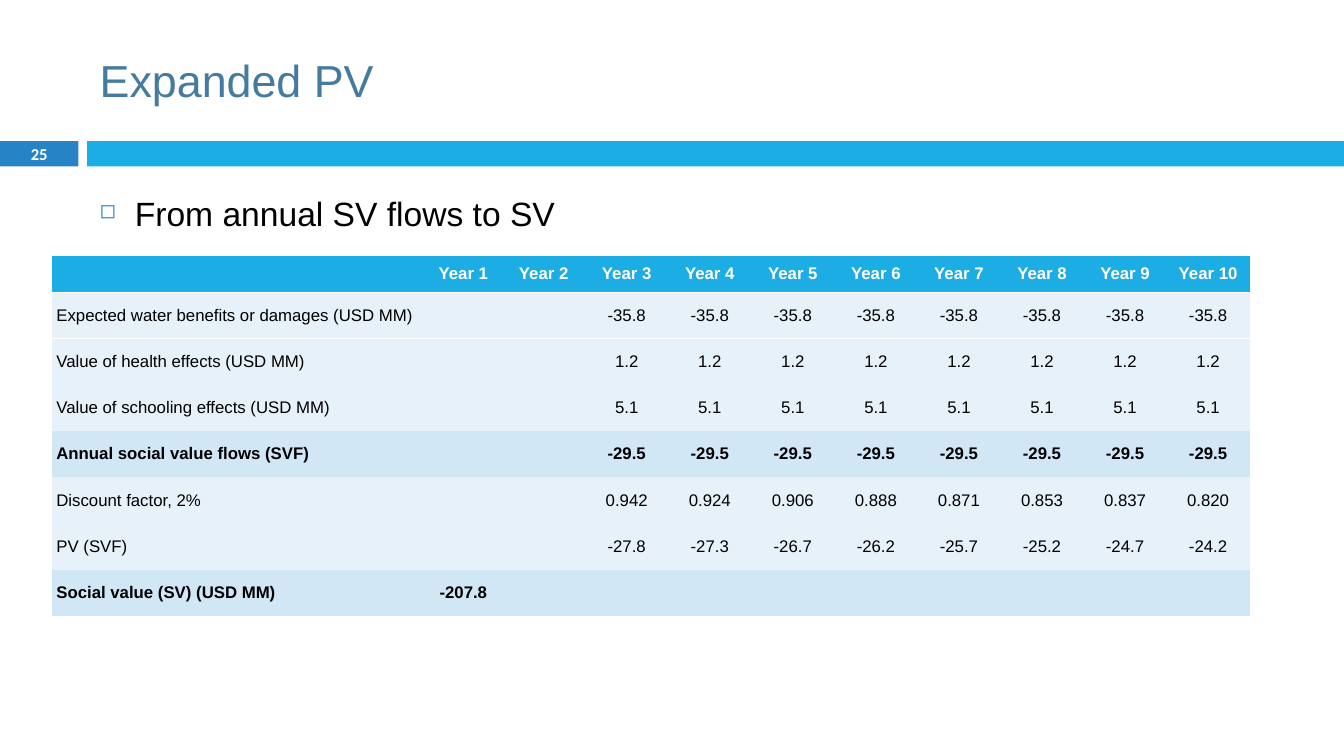
from lxml.etree import SubElement
from pptx import Presentation
from pptx.dml.color import RGBColor as RGB
from pptx.enum.shapes import MSO_SHAPE as SHAPE
from pptx.enum.text import MSO_ANCHOR as ANCHOR, PP_ALIGN as ALIGN
from pptx.oxml import parse_xml
from pptx.oxml.ns import nsdecls, qn
from pptx.util import Pt

COLORS = {
    "title": "457B9E", "number": "2683C6", "accent": "1CADE4",
    "light": "E7F1FA", "total": "D1E7F6", "white": "FFFFFF", "text": "000000",
}
NO_GRID = "{2D5ABB26-0587-4C30-8999-92F81FD0307C}"
YEARS = 10
ROWS = [
    ("", [f"Year {n + 1}" for n in range(YEARS)], "accent"),
    ("Expected water benefits or damages (USD MM)", ["", ""] + ["-35.8"] * 8, "light"),
    ("Value of health effects (USD MM)", ["", ""] + ["1.2"] * 8, "light"),
    ("Value of schooling effects (USD MM)", ["", ""] + ["5.1"] * 8, "light"),
    ("Annual social value flows (SVF)", ["", ""] + ["-29.5"] * 8, "total"),
    ("Discount factor, 2%", ["", "", "0.942", "0.924", "0.906", "0.888",
                             "0.871", "0.853", "0.837", "0.820"], "light"),
    ("PV (SVF)", ["", "", "-27.8", "-27.3", "-26.7", "-26.2",
                  "-25.7", "-25.2", "-24.7", "-24.2"], "light"),
    ("Social value (SV) (USD MM)", ["-207.8"] + [""] * 9, "total"),
]


def set_attrs(obj, values):
    for name, value in values.items():
        setattr(obj, name, value)


def write(tf, text, size, color, bold=False, font="Arial", **para):
    p = tf.paragraphs[0]
    set_attrs(p, para)
    if text:
        r = p.add_run()
        r.text = text
        set_attrs(r.font, {"size": Pt(size), "name": font, "bold": bold})
        r.font.color.rgb = RGB.from_string(COLORS[color])
    return p


def add_title(s, x, y, w, h):
    sp = s.shapes.title
    set_attrs(sp, {"left": Pt(x), "top": Pt(y), "width": Pt(w), "height": Pt(h)})
    sp.text_frame.vertical_anchor = ANCHOR.MIDDLE
    write(sp.text_frame, "Expanded PV", 32, "title", alignment=ALIGN.LEFT)


def add_band(s, x, y, w, h):
    number_w, gap = 56, 6.2
    bar_x = number_w + gap
    for left, width, color in ((x, number_w, "number"), (x + bar_x, w - bar_x, "accent")):
        sp = s.shapes.add_shape(SHAPE.RECTANGLE, Pt(left), Pt(y), Pt(width), Pt(h))
        sp.shadow.inherit = False
        sp.fill.solid()
        sp.fill.fore_color.rgb = RGB.from_string(COLORS[color])
        sp.line.fill.background()
    tf = s.shapes.add_textbox(Pt(x), Pt(y), Pt(number_w), Pt(h)).text_frame
    set_attrs(tf, {"word_wrap": True, "vertical_anchor": ANCHOR.MIDDLE,
                   "margin_top": 0, "margin_bottom": 0})
    write(tf, "25", 11.9, "white", True, "Calibri", alignment=ALIGN.CENTER)


def add_body(s, x, y, w, h):
    tf = s.shapes.add_textbox(Pt(x), Pt(y), Pt(w), Pt(h)).text_frame
    tf.word_wrap = True
    p = write(tf, "From annual SV flows to SV", 24, "text",
              line_spacing=1.5, space_before=Pt(7))
    pPr = p._p.get_or_add_pPr()
    indent = Pt(25.2)
    pPr.set("marL", str(indent))
    pPr.set("indent", str(-indent))
    SubElement(SubElement(pPr, qn("a:buClr")), qn("a:srgbClr")).set("val", COLORS["number"])
    SubElement(pPr, qn("a:buSzPct")).set("val", "60000")
    SubElement(pPr, qn("a:buChar")).set("char", "◻")


def add_border(cell, side):
    line = parse_xml(
        f'<a:{side} {nsdecls("a")} w="{Pt(1)}"><a:solidFill>'
        f'<a:srgbClr val="{COLORS["white"]}"/></a:solidFill></a:{side}>')
    cell._tc.get_or_add_tcPr().insert(0, line)


def fill_cell(cell, text, color, header, label):
    set_attrs(cell, {"vertical_anchor": ANCHOR.MIDDLE, "margin_left": Pt(3.4),
                     "margin_right": Pt(3.4), "margin_top": 0, "margin_bottom": 0})
    cell.fill.solid()
    cell.fill.fore_color.rgb = RGB.from_string(COLORS[color])
    write(cell.text_frame, text, 12, "white" if header else "text", color != "light",
          alignment=ALIGN.LEFT if label else ALIGN.CENTER,
          space_before=Pt(2), space_after=Pt(2))


def add_flows(s, x, y, w, h):
    label_w, first_w, header_h = 266.4, 55.4, 25.8
    year_w = (w - label_w - first_w) / (YEARS - 1)
    row_h = (h - header_h) / (len(ROWS) - 1)
    frame = s.shapes.add_table(len(ROWS), YEARS + 1, Pt(x), Pt(y), Pt(w), Pt(h))
    table = frame.table
    table.horz_banding = False
    for style in frame.element.iter(qn("a:tableStyleId")):
        style.text = NO_GRID
    for column, width in zip(table.columns, [label_w, first_w] + [year_w] * (YEARS - 1)):
        column.width = Pt(width)
    for i, (label, values, color) in enumerate(ROWS):
        table.rows[i].height = Pt(row_h if i else header_h)
        for j, text in enumerate([label] + values):
            cell = table.cell(i, j)
            fill_cell(cell, text, color, i == 0, j == 0)
            if i < 2:
                add_border(cell, "lnT" if i else "lnB")


def main():
    prs = Presentation()
    prs.slide_width, prs.slide_height = Pt(960), Pt(540)
    s = prs.slides.add_slide(prs.slide_layouts[5])
    add_band(s, 0, 100.8, 960, 18)
    add_title(s, 64, 18, 856, 78)
    add_body(s, 64, 119.5, 818, 388)
    add_flows(s, 36.9, 182.9, 856, 257)
    prs.save("out.pptx")


if __name__ == "__main__":
    main()
